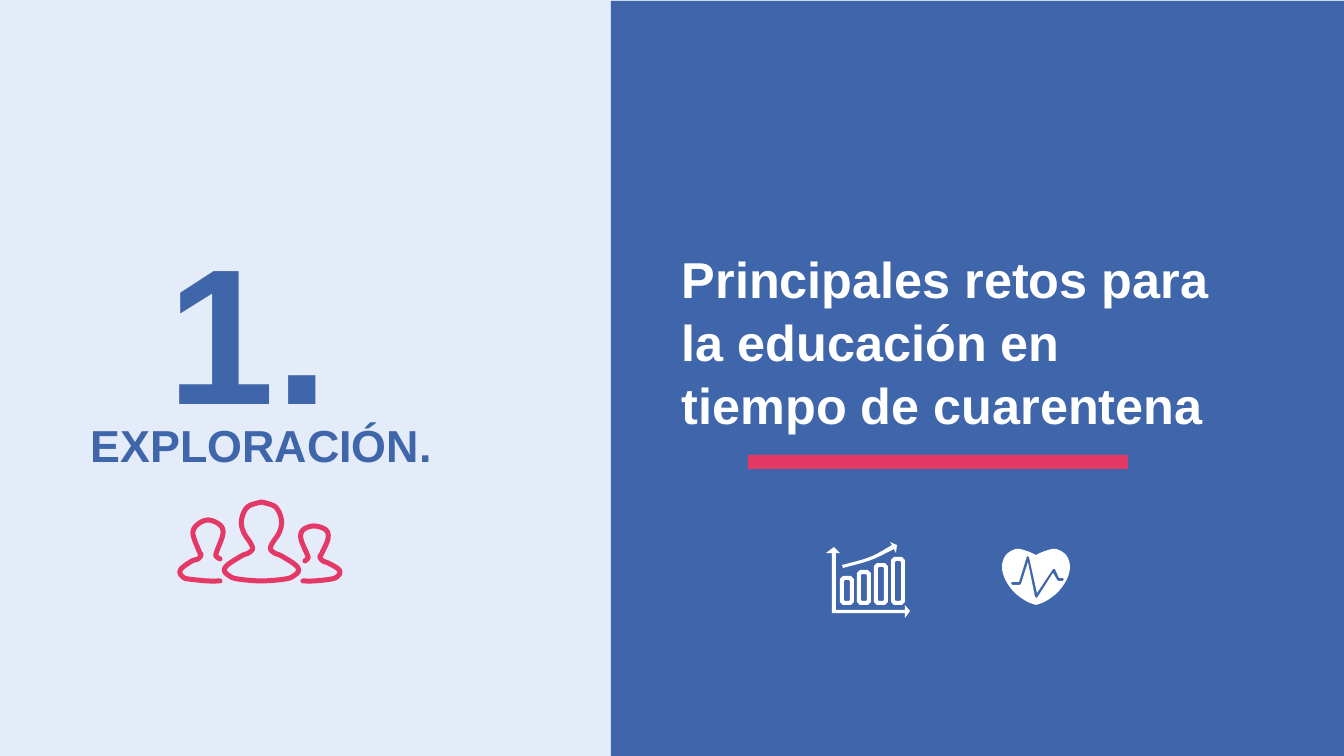
from pptx import Presentation
from pptx.dml.color import RGBColor
from pptx.enum.shapes import MSO_SHAPE as Shape
from pptx.enum.text import MSO_ANCHOR as Anchor, MSO_AUTO_SIZE as AutoSize, PP_ALIGN as Align
from pptx.util import Pt

PX = 12192000 / 1344
GRAIN = 20
COLORS = {"pale": "E3ECF8", "blue": "3F65AA", "pink": "E43866", "white": "FFFFFF"}


def px(length):
    return round(length * PX)


def color(name):
    return RGBColor.from_string(COLORS[name])


def curve(knots, steps=6):
    padded = [knots[0], *knots, knots[-1]]
    points = [knots[0]]
    for a, b, c, d in zip(padded, padded[1:], padded[2:], padded[3:]):
        for step in range(1, steps + 1):
            t = step / steps
            points.append(tuple(
                (2 * q + (r - p) * t + (2 * p - 5 * q + 4 * r - s) * t ** 2
                 + (3 * q - p - 3 * r + s) * t ** 3) / 2
                for p, q, r, s in zip(a, b, c, d)))
    return points


def mirrored(center, half):
    right = [(center + x, y) for x, y in half]
    left = [(center - x, y) for x, y in reversed(half)]
    return right, left


def chamfered(left, top, right, bottom, cut):
    return [(left + cut, top), (right - cut, top), (right, top + cut), (right, bottom - cut),
            (right - cut, bottom), (left + cut, bottom), (left, bottom - cut), (left, top + cut)]


class Deck:
    font = "Arial"

    def __init__(self):
        self.file = Presentation()
        self.file.slide_width, self.file.slide_height = px(1344), px(756)
        self.slide = self.file.slides.add_slide(self.file.slide_layouts[5])
        self.shapes = self.slide.shapes

    def background(self, fill):
        self.slide.background.fill.solid()
        self.slide.background.fill.fore_color.rgb = color(fill)

    def paint(self, shape, fill):
        shape.shadow.inherit = False
        shape.fill.solid()
        shape.fill.fore_color.rgb = color(fill)
        shape.line.fill.background()

    def block(self, left, top, width, height, fill):
        self.paint(self.shapes.add_shape(
            Shape.RECTANGLE, px(left), px(top), px(width), px(height)), fill)

    def set_words(self, box, words, size, ink, spacing, align=Align.LEFT):
        frame = box.text_frame
        frame.text = words
        frame.word_wrap = True
        frame.auto_size = AutoSize.NONE
        frame.vertical_anchor = Anchor.TOP
        frame.margin_left = frame.margin_right = px(10)
        frame.margin_top = frame.margin_bottom = px(5)
        paragraph = frame.paragraphs[0]
        paragraph.alignment = align
        paragraph.line_spacing = spacing
        paragraph.font.name = self.font
        paragraph.font.size = Pt(size)
        paragraph.font.bold = True
        paragraph.font.color.rgb = color(ink)

    def text(self, left, top, width, height, words, size, ink, align=Align.LEFT):
        box = self.shapes.add_textbox(px(left), px(top), px(width), px(height))
        self.set_words(box, words, size, ink, 1.08, align)

    def title(self, left, top, width, height, words, size, ink):
        title = self.shapes.title
        title.left, title.top, title.width, title.height = map(px, (left, top, width, height))
        self.set_words(title, words, size, ink, 1.04)
        title.element.getparent().append(title.element)

    def outline(self, contours, closed):
        builder = None
        for contour in contours:
            start, *rest = [(round(x * GRAIN), round(y * GRAIN)) for x, y in contour]
            if builder is None:
                builder = self.shapes.build_freeform(*start, scale=PX / GRAIN)
            else:
                builder.move_to(*start)
            builder.add_line_segments(rest, close=closed)
        return builder.convert_to_shape()

    def filled_icon(self, contours, fill):
        self.paint(self.outline(contours, True), fill)

    def stroked_icon(self, contours, ink, weight):
        icon = self.outline(contours, False)
        icon.shadow.inherit = False
        icon.fill.background()
        icon.line.color.rgb = color(ink)
        icon.line.width = px(weight)
        icon.line._get_or_add_ln().set("cap", "rnd")


def heart_icon():
    right, left = mirrored(1036, [(0, 555), (9, 551), (20, 549), (30, 555), (34, 566),
                                  (31, 579), (22, 592), (10, 601), (0, 605)])
    pulse = [(1063, 581), (1058, 581), (1053, 573), (1037, 598), (1035, 597), (1028, 562),
             (1021, 584), (1020, 585), (1012, 585), (1011, 583), (1012, 582), (1019, 582),
             (1027, 556), (1029, 557), (1037, 593), (1053, 569), (1055, 569), (1059, 578),
             (1063, 578), (1064, 579)]
    return [curve(right) + curve(left), pulse]


def growth_icon():
    contours = []
    for index, top in enumerate((576, 570, 563, 557)):
        left = 840 + 17 * index
        contours.append(chamfered(left, top, left + 14, 605, 3))
        contours.append(chamfered(left + 4, top + 4, left + 10, 601, 1))
    axes = [(832, 613), (832, 553), (826, 553), (834, 547), (840, 553), (836, 553), (836, 610),
            (905, 610), (905, 605), (910, 611), (905, 618), (905, 613)]
    trend = curve([(842, 565), (870, 557), (892, 545)]) + [
        (890, 542), (897, 545), (896, 553)] + curve([(894, 549), (871, 560), (843, 568)])
    return contours + [axes, trend]


def people_icon():
    right, left = mirrored(261.5, [(0, 502), (14, 507), (20, 520), (18, 532), (11, 543),
                                   (9, 549), (13, 553), (20, 556), (34, 565), (37, 571),
                                   (32, 576), (24, 579), (0, 581)])
    left_person = [(220, 581), (208, 581), (188, 579), (183, 577), (180, 573), (182, 568),
                   (192, 561), (198, 559), (201, 555), (199, 551), (193, 534), (197, 525),
                   (208, 520), (220, 525), (223, 534), (217, 551), (216, 556), (220, 559)]
    right_person = [(303, 581), (314, 581), (332, 579), (338, 576), (340, 572), (337, 568),
                    (328, 563), (323, 561), (320, 557), (322, 553), (328, 539), (326, 530),
                    (314, 526), (303, 530), (301, 539), (307, 554), (308, 558), (305, 561)]
    return [curve(right + left[1:]), curve(left_person), curve(right_person)]


def main():
    deck = Deck()
    deck.background("pale")
    deck.text(158, 188, 186, 244, "1.", 138, "blue")
    deck.block(611, 1, 733, 755, "blue")
    deck.text(57, 408, 385, 65, "EXPLORACIÓN.", 32, "blue", Align.RIGHT)
    deck.title(672, 241, 564, 194,
               "Principales retos para la educación en tiempo de cuarentena", 36, "white")
    deck.block(748, 455, 380, 14, "pink")
    deck.filled_icon(heart_icon(), "white")
    deck.filled_icon(growth_icon(), "white")
    deck.stroked_icon(people_icon(), "pink", 5)
    deck.file.save("out.pptx")


if __name__ == "__main__":
    main()
